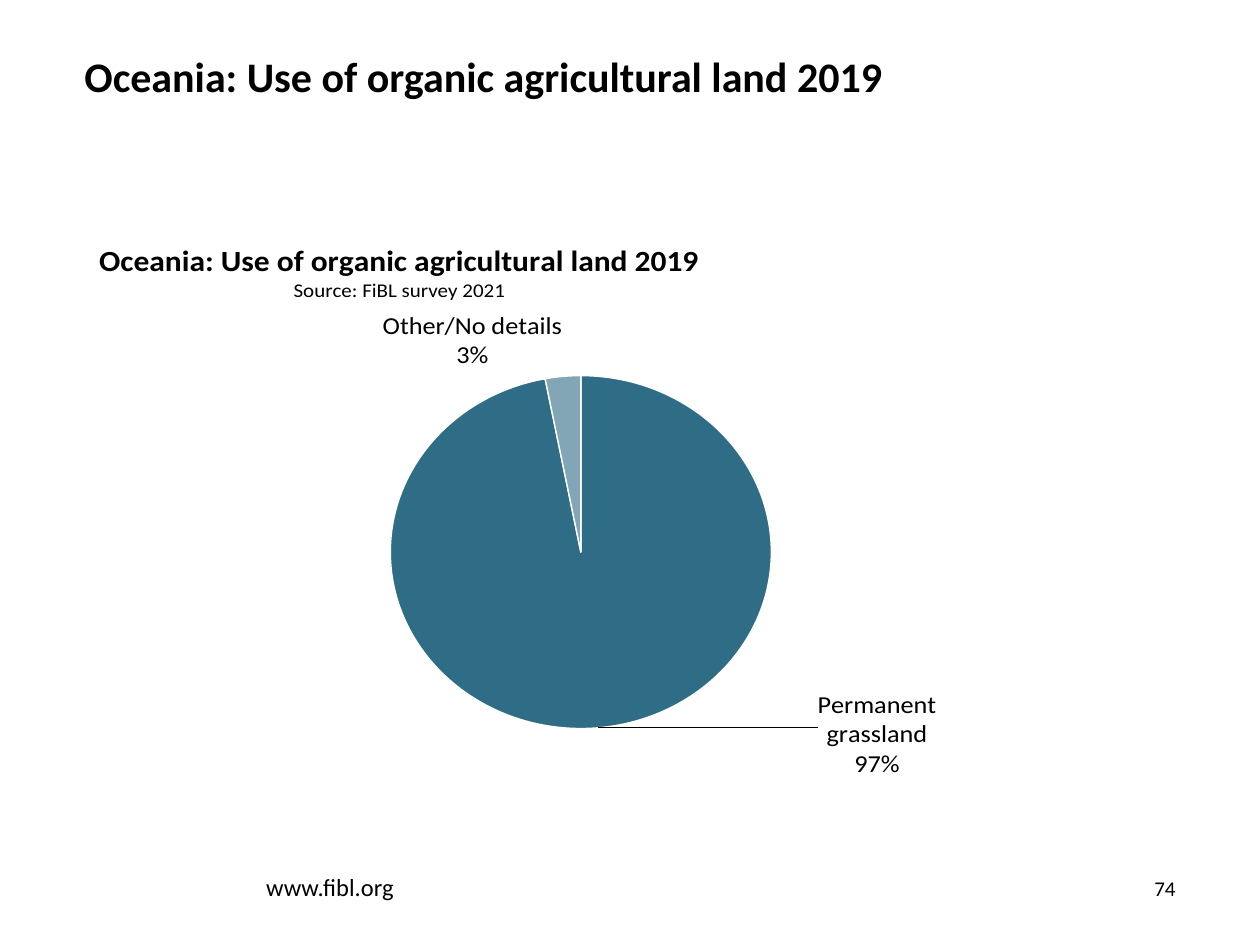
import pptx
import pptx.util
import pptx.chart.data
import pptx.dml.color
import pptx.enum.chart
import pptx.enum.text
import pptx.oxml
import pptx.oxml.ns
from lxml import etree
from dataclasses import dataclass

Pt, Inch = pptx.util.Pt, pptx.util.Inches
Align = pptx.enum.text.PP_ALIGN
Anchor = pptx.enum.text.MSO_ANCHOR


@dataclass(frozen=True)
class Theme:
    font: str = "Calibri"
    ink: str = "000000"
    teal: str = "2F6C86"
    white: str = "FFFFFF"
    head: int = 24
    title: int = 18
    label: int = 15
    site: int = 14
    note: int = 12


THEME = Theme()
WIDE, HIGH = 10, 7.5


def color(code):
    return pptx.dml.color.RGBColor.from_string(code)


def style(font, size, bold=False):
    font.name, font.size, font.bold = THEME.font, Pt(size), bold
    font.color.rgb = color(THEME.ink)


def box(area):
    """Turn shares of the slide into lengths."""
    return [Inch(share * side) for share, side in zip(area, (WIDE, HIGH) * 2)]


def write(slide, area, text, size, bold=False, align=Align.LEFT,
          anchor=Anchor.TOP, pad=0):
    frame = slide.shapes.add_textbox(*box(area)).text_frame
    frame.word_wrap = True
    frame.vertical_anchor = anchor
    frame.margin_left = frame.margin_right = 0
    frame.margin_top = frame.margin_bottom = Inch(pad)
    frame.text = text
    par = frame.paragraphs[0]
    par.alignment = align
    style(par.runs[0].font, size, bold)
    return par


def place(owner, spots, before=None):
    """Give a chart part a manual layout."""
    tag = pptx.oxml.ns.qn
    for old in owner.findall(tag("c:layout")):
        owner.remove(old)
    layout = etree.Element(tag("c:layout"))
    manual = etree.SubElement(layout, tag("c:manualLayout"))
    for name, value in spots.items():
        etree.SubElement(manual, tag("c:" + name)).set("val", str(value))
    if before is None:
        owner.insert(0, layout)
    else:
        owner.find(tag(before)).addprevious(layout)


def caption(chart):
    frame = chart.chart_title.text_frame
    frame.text = "Oceania: Use of organic agricultural land 2019"
    style(frame.paragraphs[0].runs[0].font, THEME.title, True)
    source = frame.add_paragraph()
    source.text = "Source: FiBL survey 2021"
    style(source.runs[0].font, THEME.note)
    chart.chart_title.include_in_layout = True
    place(chart.chart_title._element,
          {"xMode": "edge", "yMode": "edge", "x": 0.01, "y": 0.02},
          "c:overlay")


def slices(series):
    for index in range(2):
        format = series.points[index].format
        format.fill.solid()
        format.fill.fore_color.rgb = color(THEME.teal)
        format.line.color.rgb = color(THEME.white)
        format.line.width = Pt(0.8)
    # The small slice is a paler tint
    tint = format.fill._xPr.find(".//" + pptx.oxml.ns.qn("a:srgbClr"))
    etree.SubElement(tint, pptx.oxml.ns.qn("a:alpha")).set("val", "60000")


def labels(series):
    marks = series.data_labels
    marks.show_percentage = marks.show_category_name = True
    marks.show_value = False
    marks.number_format, marks.number_format_is_linked = "0%", False
    marks.position = pptx.enum.chart.XL_LABEL_POSITION.OUTSIDE_END
    style(marks.font, THEME.label)
    # Move the grassland label to the right of the pie
    mark = series.points[0].data_label
    style(mark.font, THEME.label)
    mark.position = marks.position
    item = marks._element.find(pptx.oxml.ns.qn("c:dLbl"))
    for name, shown in (("showVal", 0), ("showCatName", 1),
                        ("showPercent", 1)):
        item.find(pptx.oxml.ns.qn("c:" + name)).set("val", str(shown))
    place(item, {"x": 0.2, "y": -0.07}, "c:spPr"
          if item.find(pptx.oxml.ns.qn("c:spPr")) is not None else "c:txPr")


def pie(slide, area):
    data = pptx.chart.data.CategoryChartData(number_format="0")
    data.categories = ["Permanent grassland", "Other/No details"]
    data.add_series("Series 1", (97, 3))
    chart = slide.shapes.add_chart(
        pptx.enum.chart.XL_CHART_TYPE.PIE, *box(area), data).chart
    chart.has_legend = False
    style(chart.font, THEME.label)
    plot = chart.plots[0]
    plot.vary_by_categories = True
    caption(chart)
    slices(plot.series[0])
    labels(plot.series[0])
    place(chart._chartSpace.chart.plotArea,
          {"layoutTarget": "inner", "xMode": "edge", "yMode": "edge",
           "x": 0.27, "y": 0.27, "w": 0.37, "h": 0.64})


def header(slide, area):
    par = write(slide, area, "Oceania: Use of organic agricultural land 2019",
                THEME.head, bold=True)
    par.line_spacing = 0.9


def footer(slide, area):
    left, top, wide, high = area
    write(slide, (left + wide / 6, top, wide / 3, high), "www.fibl.org",
          THEME.site, anchor=Anchor.BOTTOM, pad=0.05)
    write(slide, (left + wide * 0.9, top, wide * 0.1, high), "74",
          THEME.note, align=Align.RIGHT, anchor=Anchor.BOTTOM, pad=0.05)


def main():
    deck = pptx.Presentation()
    deck.slide_width, deck.slide_height = Inch(WIDE), Inch(HIGH)
    slide = deck.slides.add_slide(deck.slide_layouts[6])
    edge, span = 0.067, 0.866
    header(slide, (edge, 0.06, span, 0.09))
    pie(slide, (edge, 0.24, span, 0.63))
    footer(slide, (edge, 0.91, span, 0.05))
    deck.save("out.pptx")


if __name__ == "__main__":
    main()
